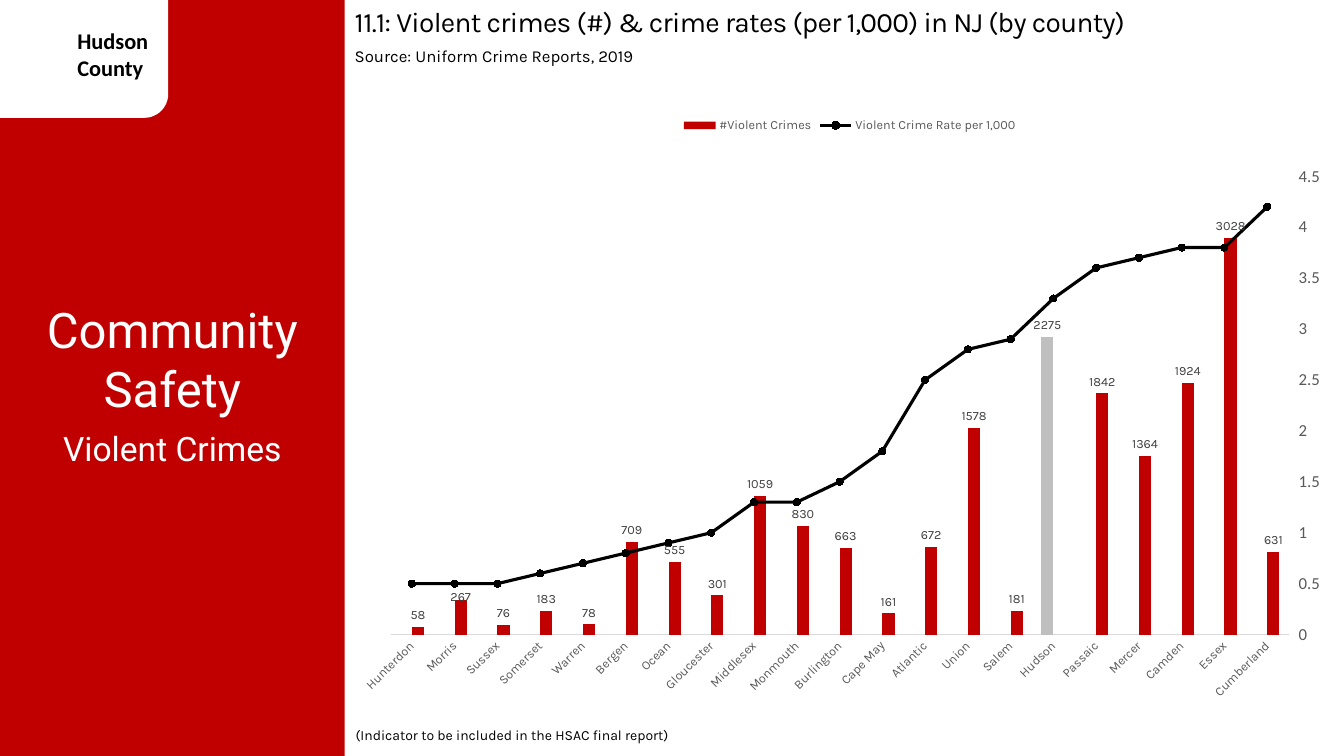
from dataclasses import dataclass

from pptx import Presentation, oxml
from pptx import util as u
from pptx.chart import axis as axes
from pptx.chart import data as chart_data
from pptx.dml import color
from pptx.enum import chart as ch
from pptx.enum import shapes, text
from pptx.oxml import ns


@dataclass(frozen=True)
class Theme:
    red: str = "C00000"
    white: str = "FFFFFF"
    black: str = "000000"
    highlight: str = "BFBFBF"
    axis_line: str = "D9D9D9"
    axis_text: str = "595959"
    value_text: str = "404040"
    title_size: float = 35
    subtitle_size: float = 24
    heading_size: float = 20
    badge_size: float = 16
    source_size: float = 12
    note_size: float = 10
    axis_size: float = 12
    label_size: float = 9
    display: str = "Roboto"
    body: str = "Karla"
    plain: str = "Calibri"


THEME = Theme()
HIGHLIGHTED = "Hudson"
COUNTIES = [
    ("Hunterdon", 58, 0.5), ("Morris", 267, 0.5), ("Sussex", 76, 0.5),
    ("Somerset", 183, 0.6), ("Warren", 78, 0.7), ("Bergen", 709, 0.8),
    ("Ocean", 555, 0.9), ("Gloucester", 301, 1), ("Middlesex", 1059, 1.3),
    ("Monmouth", 830, 1.3), ("Burlington", 663, 1.5), ("Cape May", 161, 1.8),
    ("Atlantic", 672, 2.5), ("Union", 1578, 2.8), ("Salem", 181, 2.9),
    ("Hudson", 2275, 3.3), ("Passaic", 1842, 3.6), ("Mercer", 1364, 3.7),
    ("Camden", 1924, 3.8), ("Essex", 3028, 3.8), ("Cumberland", 631, 4.2),
]
RATE_PLOT = """<c:lineChart %s><c:grouping val="standard"/><c:varyColors val="0"/>
<c:marker val="1"/><c:axId val="5001"/><c:axId val="5002"/></c:lineChart>"""
RATE_CATEGORIES = """<c:catAx %s><c:axId val="5001"/>
<c:scaling><c:orientation val="minMax"/></c:scaling><c:delete val="1"/>
<c:axPos val="b"/><c:crossAx val="5002"/><c:crosses val="autoZero"/></c:catAx>"""
RATE_VALUES = """<c:valAx %s><c:axId val="5002"/>
<c:scaling><c:orientation val="minMax"/></c:scaling><c:delete val="0"/>
<c:axPos val="r"/><c:numFmt formatCode="General" sourceLinked="0"/>
<c:majorTickMark val="out"/><c:minorTickMark val="none"/><c:tickLblPos val="nextTo"/>
<c:crossAx val="5001"/><c:crosses val="max"/></c:valAx>"""
PLOT_LAYOUT = """<c:layout %s><c:manualLayout><c:layoutTarget val="inner"/>
<c:xMode val="edge"/><c:yMode val="edge"/><c:x val="0.038"/><c:y val="0.115"/>
<c:w val="0.904"/><c:h val="0.758"/></c:manualLayout></c:layout>"""
LABEL_NUDGE = """<c:layout %s><c:manualLayout><c:x val="0"/><c:y val="0.015"/>
</c:manualLayout></c:layout>"""
HIDDEN_ENTRY = '<c:legendEntry %s><c:idx val="0"/><c:delete val="1"/></c:legendEntry>'


def rgb(value):
    return color.RGBColor.from_string(value)


def chart_xml(template):
    return oxml.parse_xml(template % ns.nsdecls("c"))


def style_font(font, name, size, tint, bold=False):
    font.name, font.size, font.bold = name, u.Pt(size), bold
    font.color.rgb = rgb(tint)


def add_panel(slide, kind, box, fill):
    panel = slide.shapes.add_shape(kind, *map(u.Cm, box))
    panel.shadow.inherit = False
    panel.fill.solid()
    panel.fill.fore_color.rgb = rgb(fill)
    panel.line.fill.background()


def add_label(slide, box, words, name, size, tint, bold=False,
              align=text.PP_ALIGN.LEFT, anchor=text.MSO_ANCHOR.TOP,
              fit=text.MSO_AUTO_SIZE.SHAPE_TO_FIT_TEXT, spacing=None):
    frame = slide.shapes.add_textbox(*map(u.Cm, box)).text_frame
    frame.word_wrap = True
    frame.auto_size = fit
    frame.vertical_anchor = anchor
    paragraph = frame.paragraphs[0]
    paragraph.alignment = align
    run = paragraph.add_run()
    run.text = words
    style_font(run.font, name, size, tint, bold)
    if spacing is not None:
        run.font._element.set("spc", str(spacing))


def style_bars(series, fill):
    series.format.fill.solid()
    series.format.fill.fore_color.rgb = rgb(fill)
    labels = series.data_labels
    labels.show_value = True
    labels.position = ch.XL_LABEL_POSITION.OUTSIDE_END
    style_font(labels.font, THEME.body, THEME.label_size, THEME.value_text)


def nudge_label(series, position):
    label = series.points[position].data_label
    label.position = ch.XL_LABEL_POSITION.OUTSIDE_END
    style_font(label.font, THEME.body, THEME.label_size, THEME.value_text)
    entry = series._element.xpath("c:dLbls/c:dLbl")[0]
    entry.insert(1, chart_xml(LABEL_NUDGE))


def move_rates_to_line(chart):
    bars = chart.plots[0]._element
    area = bars.getparent()
    rate_plot = chart_xml(RATE_PLOT)
    rate_plot.insert(2, bars.xpath("c:ser")[-1])
    for flag in rate_plot.xpath("c:ser/c:invertIfNegative"):
        flag.getparent().remove(flag)
    bars.addnext(rate_plot)
    count_values = area.xpath("c:valAx")[0]
    rate_values = chart_xml(RATE_VALUES)
    count_values.addnext(rate_values)
    rate_values.addnext(chart_xml(RATE_CATEGORIES))
    for layout in area.xpath("c:layout"):
        area.remove(layout)
    area.insert(0, chart_xml(PLOT_LAYOUT))
    return axes.ValueAxis(count_values), axes.ValueAxis(rate_values)


def style_rates(series):
    series.smooth = False
    series.format.line.width = u.Pt(2.25)
    series.format.line.color.rgb = rgb(THEME.black)
    marker = series.marker
    marker.style, marker.size = ch.XL_MARKER_STYLE.CIRCLE, 5
    marker.format.fill.solid()
    marker.format.fill.fore_color.rgb = rgb(THEME.black)
    marker.format.line.color.rgb = rgb(THEME.black)


def style_value_axis(axis, maximum, step):
    axis.minimum_scale, axis.maximum_scale, axis.major_unit = 0, maximum, step
    axis.has_major_gridlines = False
    axis.format.line.fill.background()
    style_font(axis.tick_labels.font, THEME.plain, THEME.axis_size, THEME.axis_text)


def style_county_axis(axis):
    axis.major_tick_mark = ch.XL_TICK_MARK.NONE
    axis.has_major_gridlines = False
    axis.format.line.color.rgb = rgb(THEME.axis_line)
    axis.format.line.width = u.Pt(0.75)
    style_font(axis.tick_labels.font, THEME.body, THEME.label_size, THEME.axis_text)
    axis._element.xpath("c:txPr/a:bodyPr")[0].set("rot", "-2700000")


def style_legend(chart):
    chart.has_legend = True
    legend = chart.legend
    legend.position = ch.XL_LEGEND_POSITION.TOP
    legend.include_in_layout = False
    style_font(legend.font, THEME.body, THEME.label_size, THEME.axis_text)
    legend._element.xpath("c:legendPos")[0].addnext(chart_xml(HIDDEN_ENTRY))


def add_crime_chart(slide, box):
    crimes = chart_data.CategoryChartData()
    crimes.categories = [county for county, _, _ in COUNTIES]
    crimes.add_series("Series 1", [n if c == HIGHLIGHTED else None for c, n, _ in COUNTIES])
    crimes.add_series("#Violent Crimes", [None if c == HIGHLIGHTED else n for c, n, _ in COUNTIES])
    crimes.add_series("Violent Crime Rate per 1,000", [rate for _, _, rate in COUNTIES])
    chart = slide.shapes.add_chart(
        ch.XL_CHART_TYPE.COLUMN_CLUSTERED, *map(u.Cm, box), crimes).chart
    chart.has_title = False
    style_font(chart.font, THEME.plain, THEME.note_size, THEME.black)
    count_axis, rate_axis = move_rates_to_line(chart)
    bars, rates = chart.plots
    bars.gap_width, bars.overlap, bars.vary_by_categories = 150, 0, False
    for series, fill in zip(bars.series, (THEME.highlight, THEME.red)):
        style_bars(series, fill)
    nudge_label(bars.series[1], 1)
    style_rates(rates.series[0])
    style_county_axis(chart.category_axis)
    style_value_axis(count_axis, 3500, 500)
    count_axis.major_tick_mark = ch.XL_TICK_MARK.NONE
    count_axis.tick_label_position = ch.XL_TICK_LABEL_POSITION.NONE
    style_value_axis(rate_axis, 4.5, 0.5)
    style_legend(chart)


def main():
    deck = Presentation()
    deck.slide_width, deck.slide_height = u.Cm(33.87), u.Cm(19.05)
    slide = deck.slides.add_slide(deck.slide_layouts[6])
    t, center = THEME, text.PP_ALIGN.CENTER
    add_panel(slide, shapes.MSO_SHAPE.RECTANGLE, (0, 0, 8.69, 19.05), t.red)
    add_panel(slide, shapes.MSO_SHAPE.ROUNDED_RECTANGLE, (-0.84, -0.64, 5.08, 3.61), t.white)
    add_label(slide, (1.7, 0.56, 2.46, 1.63), "Hudson County",
              t.plain, t.badge_size, t.black, bold=True)
    add_label(slide, (0, 7.42, 8.69, 3.25), "Community Safety",
              t.display, t.title_size, t.white, align=center)
    add_label(slide, (0, 10.67, 8.69, 1.27), "Violent Crimes",
              t.display, t.subtitle_size, t.white, align=center)
    add_crime_chart(slide, (8.89, 2.69, 25.04, 15.24))
    add_label(slide, (8.69, 0, 25.04, 1.12),
              "11.1: Violent crimes (#) & crime rates (per 1,000) in NJ (by county)",
              t.body, t.heading_size, t.black, spacing=-50)
    add_label(slide, (8.69, 1.02, 23.34, 0.76), "Source: Uniform Crime Reports, 2019",
              t.body, t.source_size, t.black)
    add_label(slide, (8.71, 17.93, 10.9, 1.17),
              "(Indicator to be included in the HSAC final report)",
              t.body, t.note_size, t.black, align=text.PP_ALIGN.JUSTIFY,
              anchor=text.MSO_ANCHOR.MIDDLE, fit=text.MSO_AUTO_SIZE.NONE)
    deck.save("out.pptx")


if __name__ == "__main__":
    main()
